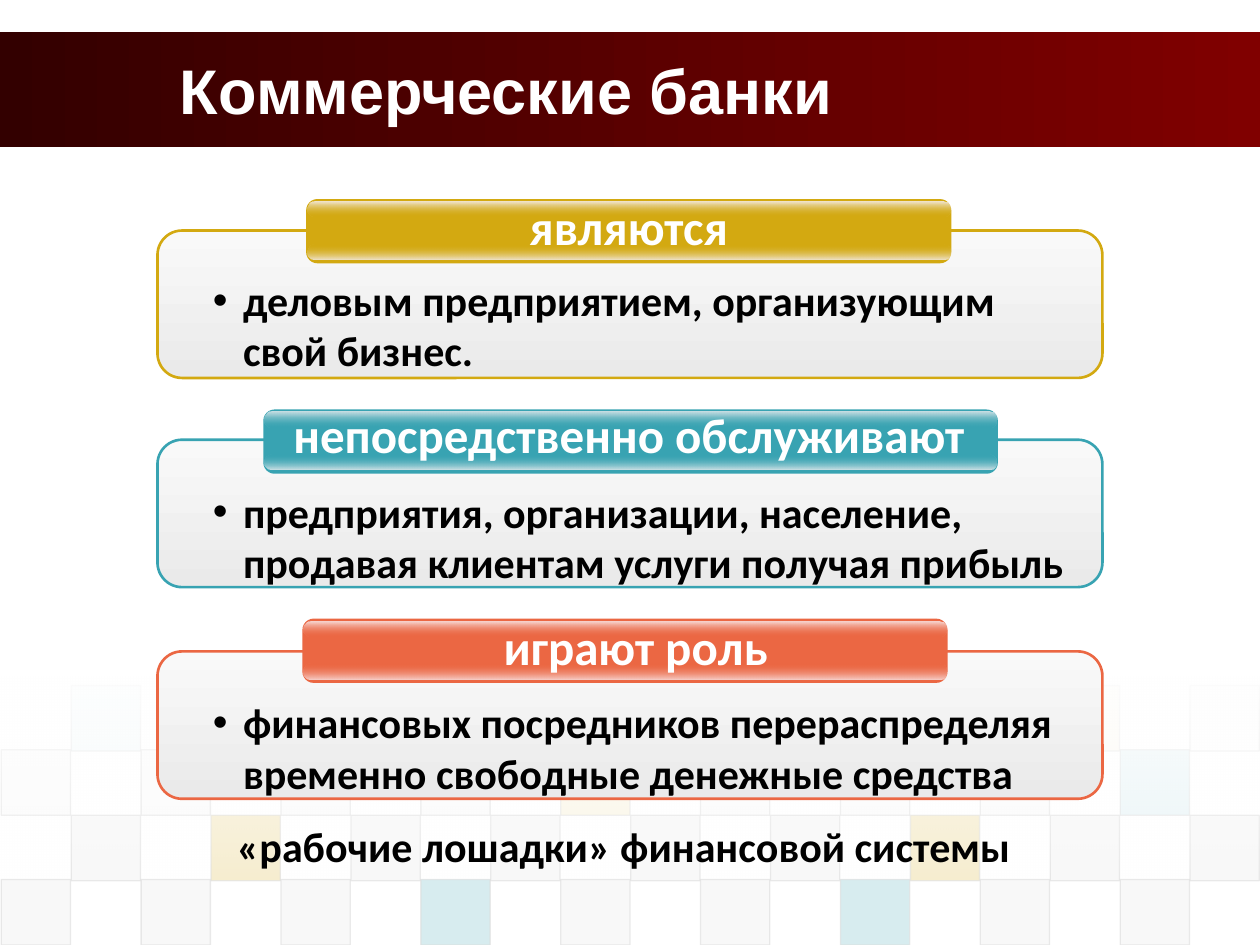
"""Build the slide on commercial banks: three titled cards over a tiled floor."""
import pptx
import pptx.chart.data
import pptx.dml.color
import pptx.enum.shapes
import pptx.enum.text
import pptx.oxml
import pptx.oxml.ns
import pptx.util
from lxml import etree

Inches, Pt = pptx.util.Inches, pptx.util.Pt
KIND = pptx.enum.shapes.MSO_SHAPE
ALIGN = pptx.enum.text.PP_ALIGN
ANCHOR = pptx.enum.text.MSO_ANCHOR
qn = pptx.oxml.ns.qn

TITLE = "Коммерческие банки"
CLOSING = "«рабочие лошадки» финансовой системы"
CARDS = [
    dict(head="являются", body="деловым предприятием, организующим свой бизнес.",
         color="D3A911", top=1.83, tab=(2.43, 1.58, 5.12), pale=("F2E8D8", "F1E6D4"),
         label=(4.09, 1.51, 1.8), text=2.13),
    dict(head="непосредственно обслуживают",
         body="предприятия, организации, население, продавая клиентам услуги получая прибыль",
         color="38A3B2", top=3.49, tab=(2.09, 3.25, 5.83), pale=("D1E2E6", "D5E4E8"),
         label=(2.2, 3.16, 5.58), text=3.81),
    dict(head="играют роль",
         body="финансовых посредников перераспределяя временно свободные денежные средства",
         color="EB6743", top=5.17, tab=(2.4, 4.91, 5.12), pale=("F8DAD6", "F8D6D2"),
         label=(3.86, 4.84, 2.37), text=5.48),
]
TILES = [
    (5.44, 5, ".T.E.E.T.D.T.E.Y.E"),
    (5.95, 10, "D.D.D.D.Y.D.D.D.T."),
    (6.47, 20, ".D.Y.D.D.D.D.Y.D.D"),
    (6.98, 20, "D.D.D.T.D.D.T.D.D."),
]
TINTS = dict(D="DDDDDD", E="EAEAEA", T="38A3B2", Y="D3A911")
STEP = 0.555


def rgb(code):
    return pptx.dml.color.RGBColor.from_string(code)


def fade(node, alpha):
    for tint in node.iter(qn("a:srgbClr")):
        etree.SubElement(tint, qn("a:alpha")).set("val", str(alpha * 1000))


def shape(home, box, kind=KIND.RECTANGLE, bend=None):
    item = home.add_shape(kind, *map(Inches, box))
    item.shadow.inherit = False
    item.line.fill.background()
    if bend is not None:
        item.adjustments[0] = bend
    return item


def paint(item, color):
    item.fill.solid()
    item.fill.fore_color.rgb = rgb(color)


def blend(item, ends, angle=270, alphas=(100, 100)):
    item.fill.gradient()
    item.fill.gradient_angle = angle
    for spot, (stop, color, alpha) in enumerate(zip(item.fill.gradient_stops, ends, alphas)):
        stop.position = spot
        stop.color.rgb = rgb(color)
        if alpha < 100:
            fade(stop._gs, alpha)


def outline(item, color, width):
    item.line.color.rgb = rgb(color)
    item.line.width = Pt(width)


def write(home, box, text, size, color, face="Calibri", align=ALIGN.LEFT,
          wrap=True, bullet=False):
    item = home.add_textbox(*map(Inches, box))
    frame = item.text_frame
    frame.word_wrap = wrap
    para = frame.paragraphs[0]
    para.text = text
    para.alignment = align
    if bullet:
        props = para._p.get_or_add_pPr()
        props.set("marL", str(Inches(0.24)))
        props.set("indent", str(-Inches(0.24)))
        etree.SubElement(props, qn("a:buFont")).set("typeface", "Arial")
        etree.SubElement(props, qn("a:buChar")).set("char", "•")
    font = para.font
    font.name, font.size, font.bold = face, Pt(size), True
    font.color.rgb = rgb(color)
    return frame


def shade(run):
    effects = etree.SubElement(run._r.get_or_add_rPr(), qn("a:effectLst"))
    cast = etree.SubElement(effects, qn("a:outerShdw"), dist="25400", dir="2700000")
    etree.SubElement(cast, qn("a:srgbClr")).set("val", "000000")


def floor(home):
    for top, alpha, row in TILES:
        for col, key in enumerate(row):
            if key in TINTS:
                tile = shape(home, (col * STEP + 0.01, top, 0.55, 0.52))
                paint(tile, TINTS[key])
                fade(tile.fill._xPr.find(qn("a:solidFill")), alpha)
                outline(tile, "DDDDDD", 0.75)
                fade(tile.line._ln, 60)
    veil = shape(home, (0, 5.37, 10, 1.62))
    blend(veil, ("FFFFFF", "FFFFFF"), alphas=(90, 0))


def card(home, data):
    color, (left, top, width) = data["color"], data["tab"]
    panel = shape(home, (1.25, data["top"], 7.5, 1.17), KIND.ROUNDED_RECTANGLE, 0.167)
    blend(panel, ("F9F9F9", "EAEAEA"))
    outline(panel, color, 1.5)
    tab = home.add_group_shape().shapes
    paint(shape(tab, (left, top, width, 0.51), KIND.ROUNDED_RECTANGLE, 0.175), color)
    high, low = data["pale"]
    for drop, ends, alphas in ((0.36, (color, low), (0, 100)), (0.02, (high, color), (100, 0))):
        gloss = shape(tab, (left + 0.01, top + drop, width - 0.02, 0.12),
                      KIND.ROUNDED_RECTANGLE, 0.5)
        blend(gloss, ends, alphas=alphas)
    x, y, span = data["label"]
    head = write(home, (x, y, span, 0.57), data["head"], 28, "FFFFFF",
                 align=ALIGN.CENTER, wrap=False)
    shade(head.paragraphs[0].runs[0])
    write(home, (1.59, data["text"], 7.11, 0.91), data["body"], 24, "000000", bullet=True)


def main():
    deck = pptx.Presentation()
    deck.slide_width, deck.slide_height = Inches(10), Inches(7.5)
    home = deck.slides.add_slide(deck.slide_layouts[6]).shapes
    blend(shape(home, (0, 0.25, 10, 0.92)), ("330000", "800000"), angle=0)
    floor(home)
    title = write(home, (1.33, 0.25, 8.08, 0.92), TITLE, 36, "FFFFFF", face="Arial")
    title.vertical_anchor = ANCHOR.MIDDLE
    for data in CARDS:
        card(home, data)
    closing = write(home, (1.58, 6.42, 6.74, 0.52), CLOSING, 24, "000000", align=ALIGN.CENTER)
    closing.paragraphs[0].line_spacing = 1.1
    deck.save("out.pptx")


if __name__ == "__main__":
    main()
